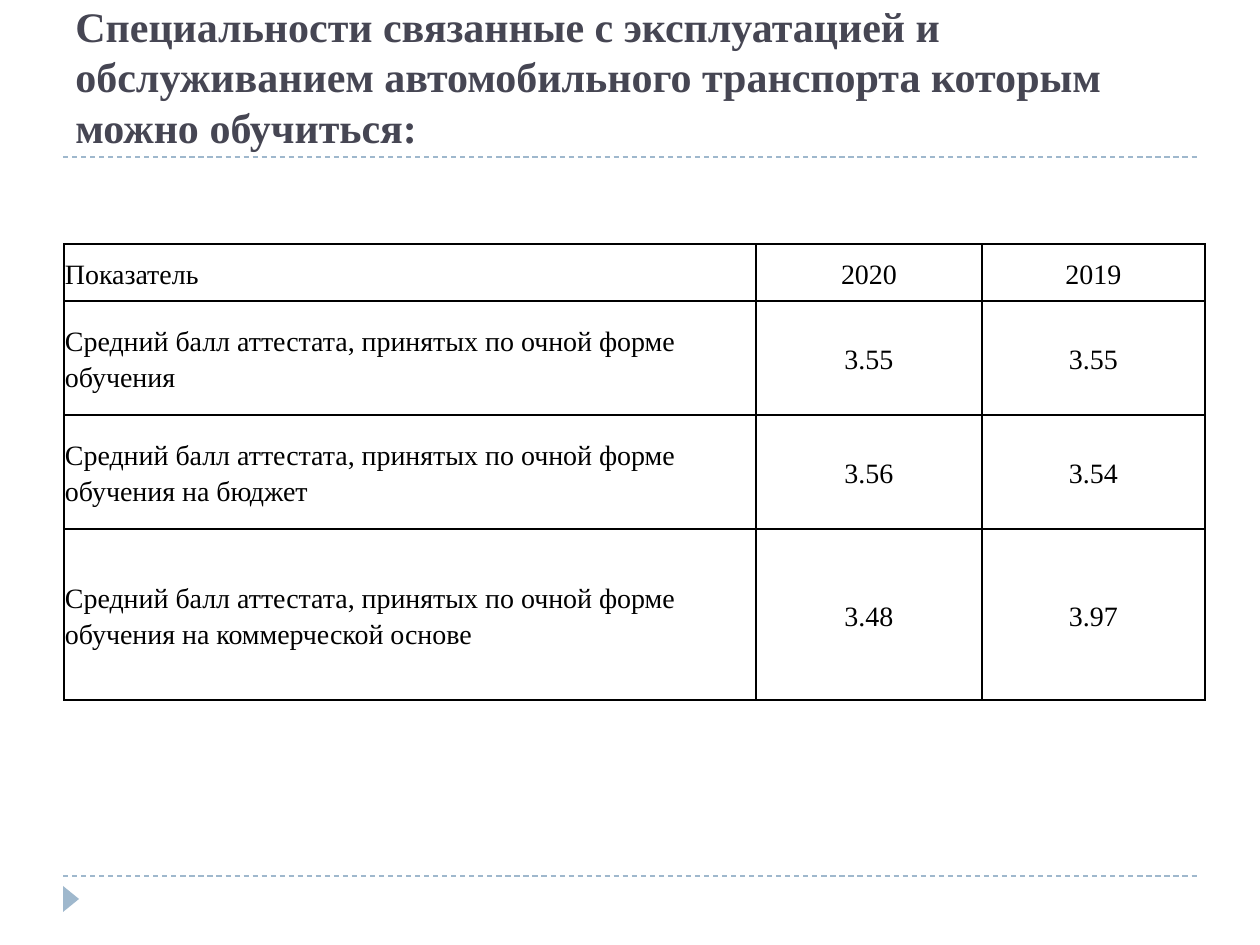
from lxml import etree
from pptx import Presentation
from pptx.dml.color import RGBColor
from pptx.enum.dml import MSO_LINE
from pptx.enum.shapes import MSO_CONNECTOR, MSO_SHAPE
from pptx.enum.text import MSO_ANCHOR, PP_ALIGN
from pptx.oxml import parse_xml
from pptx.oxml.ns import nsdecls, qn
from pptx.util import Pt

STRAIGHT = MSO_CONNECTOR.STRAIGHT
TRIANGLE = MSO_SHAPE.ISOSCELES_TRIANGLE
DASH = MSO_LINE.DASH
MIDDLE, BOTTOM = MSO_ANCHOR.MIDDLE, MSO_ANCHOR.BOTTOM
LEFT, CENTER = PP_ALIGN.LEFT, PP_ALIGN.CENTER
PX = 914400 / 126
FONT = "Times New Roman"
ACCENT, INK, BLACK = "9FB8CD", "464653", "000000"


def emu(*lengths):
    return [round(length * PX) for length in lengths]


def color(value):
    return RGBColor.from_string(value)


deck = Presentation()
deck.slide_width, deck.slide_height = emu(1260, 945)
page = deck.slides.add_slide(deck.slide_layouts[6])

# Dashed rules under the title and above the footer
for y in (876, 157):
    rule = page.shapes.add_connector(STRAIGHT, *emu(63, y, 1197, y))
    rule.line.color.rgb = color(ACCENT)
    rule.line.width = Pt(0.75)
    rule.line.dash_style = DASH
    etree.SubElement(rule.element.spPr, qn("a:effectLst"))

# Footer marker
marker = page.shapes.add_shape(TRIANGLE, *emu(58, 891, 26, 16))
marker.rotation = 90
marker.shadow.inherit = False
marker.fill.solid()
marker.fill.fore_color.rgb = color(ACCENT)
marker.line.fill.background()

# Title
title = page.shapes.add_textbox(*emu(63, 32, 1134, 126))
frame = title.text_frame
frame.word_wrap = True
frame.vertical_anchor = BOTTOM
frame.text = ("Специальности связанные с эксплуатацией и обслуживанием "
              "автомобильного транспорта которым можно обучиться:")
font = frame.paragraphs[0].runs[0].font
font.name, font.size, font.bold = FONT, Pt(24), True
font.color.rgb = color(INK)

# Table of average grades
GRADE = "Средний балл аттестата, принятых по очной форме обучения"
rows = [
    ("Показатель", "2020", "2019"),
    (GRADE, "3.55", "3.55"),
    (GRADE + " на бюджет", "3.56", "3.54"),
    (GRADE + " на коммерческой основе", "3.48", "3.97"),
]
widths = emu(692, 226, 223)
heights = emu(57, 114, 114, 171)
table = page.shapes.add_table(len(rows), len(widths), *emu(64, 244),
                              sum(widths), sum(heights)).table
table.first_row = table.horz_banding = False
for column, width in zip(table.columns, widths):
    column.width = width
for row, height in zip(table.rows, heights):
    row.height = height

for r, texts in enumerate(rows):
    for c, text in enumerate(texts):
        cell = table.cell(r, c)
        cell.text_frame.text = text
        cell.vertical_anchor = MIDDLE
        cell.margin_left = cell.margin_right = emu(1)[0]
        cell.margin_top = cell.margin_bottom = emu(1)[0]
        para = cell.text_frame.paragraphs[0]
        para.alignment = CENTER if c else LEFT
        para.line_spacing = 1.15
        para.space_after = Pt(10)
        font = para.runs[0].font
        font.name, font.size = FONT, Pt(16)
        font.color.rgb = color(BLACK)
        # Borders come before the fill in the cell properties
        for side in ("lnL", "lnR", "lnT", "lnB"):
            cell._tc.get_or_add_tcPr().append(parse_xml(
                f'<a:{side} {nsdecls("a")} w="{Pt(1)}"><a:solidFill>'
                f'<a:srgbClr val="{BLACK}"/></a:solidFill></a:{side}>'))
        cell.fill.background()

deck.save("out.pptx")
